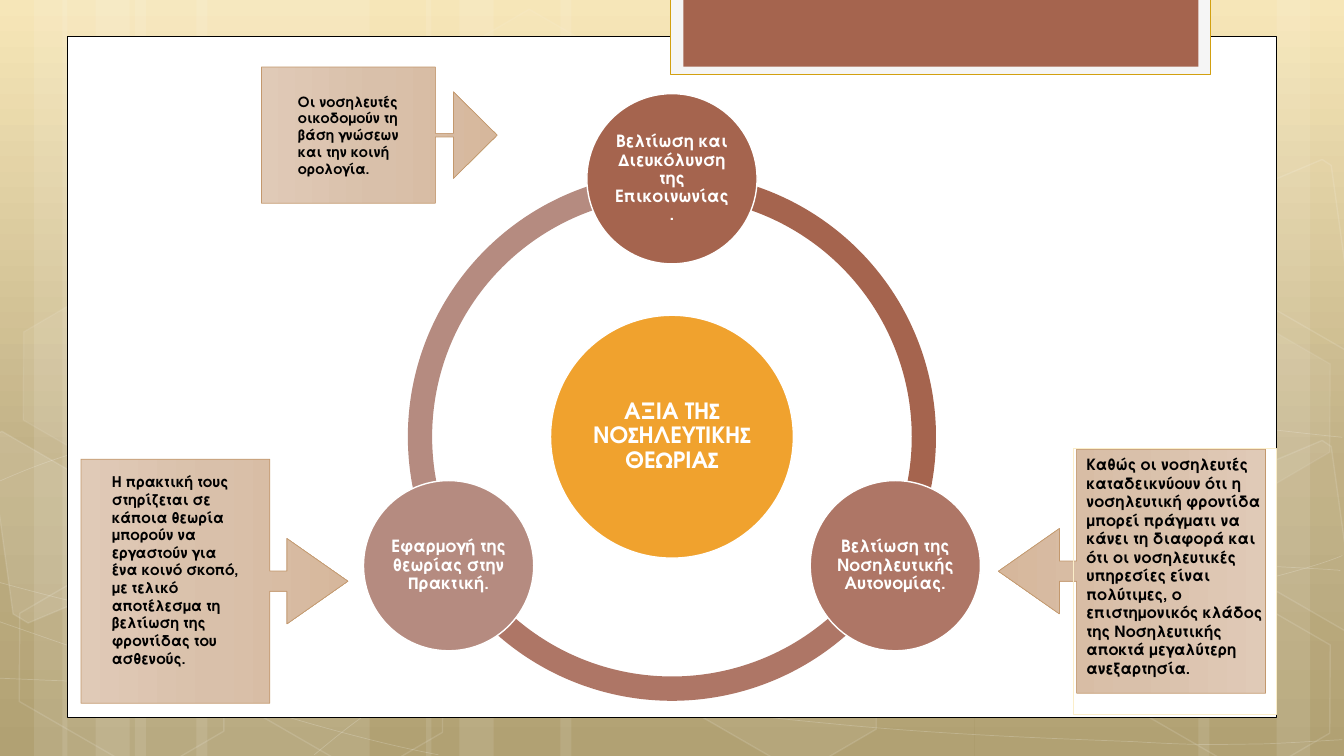
import copy
import math

import lxml.etree
import pptx
import pptx.dml.color
import pptx.enum.shapes
import pptx.enum.text
import pptx.oxml.ns
import pptx.util

Cm = pptx.util.Cm
SHAPES = pptx.enum.shapes.MSO_SHAPE
ALIGN = pptx.enum.text.PP_ALIGN
FONT = "TeX Gyre Adventor"

BANDS = [(3.4, 5.92), (0, 1.7), (0.86, 2.82), (4.95, 5.92), (1.57, 1.7), (2.41, 2.82),
         (24.56, 5.92), (32.17, 1.7), (30.2, 2.82), (14.12, 10.44), (10.74, 1.7), (11.58, 2.82)]

CURVES = [
    [(0, 17.09), (1.8, 17.17), (3.63, 17.25), (6.17, 17.22), (8.71, 17.2), (11.84, 17.15),
     (15.21, 16.89), (18.62, 16.64), (23.42, 16.15), (26.54, 15.67), (29.64, 15.19),
     (32.82, 14.43), (33.83, 14)],
    [(0, 12.12), (0.94, 11.71), (1.9, 11.33), (3.84, 10.95), (5.77, 10.57), (8.48, 10.01),
     (11.48, 9.83), (14.5, 9.65), (18.14, 9.63), (21.87, 9.83), (25.6, 10.03),
     (31.8, 10.82), (33.83, 11.02)],
    [(0, 15.67), (4.01, 17.07), (8.1, 18.47), (11.05, 19.02)],
    [(0, 14.68), (1.02, 14.96), (2.08, 15.24), (4.06, 15.65), (6.02, 16.03), (8.97, 16.66),
     (11.79, 17.09), (14.63, 17.53), (18.19, 17.98), (20.98, 18.24), (23.8, 18.52),
     (26.8, 18.62), (28.6, 18.69), (30.38, 18.8), (30.84, 18.75), (31.72, 18.75),
     (32.59, 18.72), (33.22, 18.67), (33.83, 18.64)],
    [(7.92, 19.02), (8.53, 18.52), (9.12, 18.01), (9.96, 17.55), (10.77, 17.09),
     (11.91, 16.59), (12.85, 16.23), (13.79, 15.88), (14.38, 15.72), (15.62, 15.47),
     (16.87, 15.21), (19.15, 14.86), (20.32, 14.68), (21.51, 14.5), (21.69, 14.5),
     (22.76, 14.45), (23.8, 14.38), (25.45, 14.3), (26.62, 14.27), (27.79, 14.25),
     (29.74, 14.27), (29.74, 14.27), (30.5, 14.27), (31.2, 14.27), (31.98, 14.27),
     (32.61, 14.3), (33.12, 14.33), (33.48, 14.35), (33.78, 14.38), (33.68, 14.35),
     (33.78, 14.38)],
]

HEXAGONS = [(11.02, 0.91, 4, 8), (16.54, 14.96, 6, 12), (0.1, 15.01, 0, 12), (0.2, 7.92, 7, 8),
            (5.61, 15.04, 0, 12), (27.97, 15.06, 0, 12), (27.97, 7.98, 7, 8)]
LEFT_CUT = [(-0.28, 11.02), (0.05, 10.87), (2.64, 12.37), (2.95, 14.76), (0.71, 15.7), (0.33, 15.47)]
RIGHT_CUT = [(31.09, 12.04), (33.32, 11.1), (33.55, 11.25), (34.19, 15.88), (33.99, 15.95), (31.39, 14.45)]
UPPER_RIGHT_CUT = [(x, y - 7.08) for x, y in RIGHT_CUT]


def color(value):
    return pptx.dml.color.RGBColor.from_string(value)


def set_opacity(shape, route, percent):
    for element in shape._element.spPr.xpath(route + "/a:srgbClr"):
        alpha = lxml.etree.SubElement(element, pptx.oxml.ns.qn("a:alpha"))
        alpha.set("val", str(percent * 1000))


def paint(shape, fill=None, line=None, width=1, fill_opacity=100, line_opacity=100):
    shape.shadow.inherit = False
    if fill and fill_opacity:
        shape.fill.solid()
        shape.fill.fore_color.rgb = color(fill)
        if fill_opacity < 100:
            set_opacity(shape, "./a:solidFill", fill_opacity)
    else:
        shape.fill.background()
    if line:
        shape.line.color.rgb = color(line)
        shape.line.width = pptx.util.Pt(width)
        if line_opacity < 100:
            set_opacity(shape, "./a:ln/a:solidFill", line_opacity)
    else:
        shape.line.fill.background()


def paint_gradient(fill, element, stops):
    fill.gradient()
    fill.gradient_angle = 270
    stop_list = element.xpath(".//a:gsLst")[0]
    while len(stop_list) < len(stops):
        stop_list.append(copy.deepcopy(stop_list[0]))
    for stop, (position, value) in zip(fill.gradient_stops, stops):
        stop.position = position
        stop.color.rgb = color(value)


def add_preset(slide, kind, left, top, width, height, adjustments=()):
    shape = slide.shapes.add_shape(kind, Cm(left), Cm(top), Cm(width), Cm(height))
    for index, value in enumerate(adjustments):
        shape.adjustments[index] = value
    return shape


def add_outline(slide, left, top, points, closed):
    corners = [(Cm(left + x), Cm(top + y)) for x, y in points]
    builder = slide.shapes.build_freeform(*corners[0])
    builder.add_line_segments(corners[1:], close=closed)
    return builder.convert_to_shape()


def add_curve(slide, left, top, controls):
    curve = add_outline(slide, left, top, controls, False)
    segments = curve._element.xpath(".//a:lnTo")
    for start in range(0, len(segments), 3):
        bend = lxml.etree.Element(pptx.oxml.ns.qn("a:cubicBezTo"))
        segments[start].addprevious(bend)
        for segment in segments[start:start + 3]:
            bend.append(segment[0])
            segment.getparent().remove(segment)
    return curve


def write(shape, text, size, value, alignment, inset=0.25, bottom=None, spacing=None, shift=0):
    frame = shape.text_frame
    frame.word_wrap = True
    frame.vertical_anchor = pptx.enum.text.MSO_ANCHOR.MIDDLE
    frame.margin_left, frame.margin_right = Cm(inset + shift), Cm(inset - shift)
    frame.margin_top = Cm(min(inset, 0.13))
    frame.margin_bottom = Cm(bottom or min(inset, 0.13))
    paragraph = frame.paragraphs[0]
    paragraph.text = text
    paragraph.alignment = alignment
    paragraph.line_spacing = spacing
    paragraph.font.name = FONT
    paragraph.font.size = pptx.util.Pt(size)
    paragraph.font.bold = True
    paragraph.font.color.rgb = color(value)


def draw_backdrop(slide, left, top, height):
    paint_gradient(slide.background.fill, slide._element,
                   [(0, "F6E4B0"), (0.62, "BAA878"), (1, "A99764")])
    for offset, width in BANDS:
        paint(add_preset(slide, SHAPES.RECTANGLE, left + offset, top, width, height),
              "FFFFFF", fill_opacity=10)
    for controls in CURVES:
        paint(add_curve(slide, left, top, controls), line="FFFFFF", width=0.5, line_opacity=20)
    for x, y, fill_opacity, line_opacity in HEXAGONS:
        hexagon = add_preset(slide, SHAPES.HEXAGON, left + x, top + y, 5.94, 3.86, (0.285, 1.155))
        hexagon.rotation = 30
        paint(hexagon, "FFFFFF", "FFFFFF", 1, fill_opacity, line_opacity)
    for points, fill_opacity in ((LEFT_CUT, 10), (RIGHT_CUT, 4), (UPPER_RIGHT_CUT, 0)):
        paint(add_outline(slide, left, top, points, True), "FFFFFF", "FFFFFF", 1, fill_opacity, 12)


def draw_panel(slide, left, top, width, height):
    paint(add_preset(slide, SHAPES.RECTANGLE, left, top, width, height), "FFFFFF", "000000", 0.5)
    tab_left, tab_top = left + 15.21, top - 0.96
    paint(add_preset(slide, SHAPES.RECTANGLE, tab_left, tab_top, 13.61, 1.93), "F5F5F5", "D2A010")
    paint(add_preset(slide, SHAPES.RECTANGLE, tab_left + 0.32, tab_top, 12.98, 1.73), "A5644E")


def draw_disc(slide, center_x, center_y, diameter, fill, text, size):
    disc = add_preset(slide, SHAPES.OVAL, center_x - diameter / 2, center_y - diameter / 2,
                      diameter, diameter)
    paint(disc, fill, "FFFFFF")
    write(disc, text, size, "FFFFFF", ALIGN.CENTER, inset=0.04, spacing=0.9)


def draw_cycle(slide, left, top, diameter, hub, nodes):
    center_x, center_y = left + diameter / 2, top + diameter / 2
    turn = 360 / len(nodes)
    angles = [(270 + turn * index) % 360 for index in range(len(nodes))]
    for angle, (fill, _) in reversed(list(zip(angles, nodes))):
        arc = add_preset(slide, SHAPES.BLOCK_ARC, left, top, diameter, diameter,
                         (angle * 0.6, (angle + turn) % 360 * 0.6, 0.046))
        paint(arc, fill)
    draw_disc(slide, center_x, center_y, 6.12, "F0A22E", hub, 16)
    for angle, (fill, text) in zip(angles, nodes):
        radians = math.radians(angle)
        draw_disc(slide, center_x + 6.5 * math.cos(radians), center_y + 6.5 * math.sin(radians),
                  4.29, fill, text, 12)


def draw_callout(slide, box, rotation, adjustments, text_box, text, size, shift, bottom=None, border=None):
    left, top, width, height = box
    callout = add_preset(slide, SHAPES.DOWN_ARROW_CALLOUT, left + (width - height) / 2,
                         top + (height - width) / 2, height, width, adjustments)
    callout.rotation = rotation
    paint(callout, line="C3986D", width=0.5)
    paint_gradient(callout.fill, callout._element, [(0, "E0CAB7"), (0.5, "D9C0AA"), (1, "D6B79C")])
    x, y, text_width, text_height = text_box
    label = slide.shapes.add_textbox(Cm(left + x), Cm(top + y), Cm(text_width), Cm(text_height))
    if border:
        label.line.color.rgb = color(border)
        label.line.width = pptx.util.Pt(0.75)
    write(label, text, size, "000000", ALIGN.LEFT, bottom=bottom, shift=shift)


def main():
    presentation = pptx.Presentation()
    presentation.slide_width, presentation.slide_height = Cm(33.87), Cm(19.05)
    slide = presentation.slides.add_slide(presentation.slide_layouts[6])
    draw_backdrop(slide, 0, 0, 19.05)
    draw_panel(slide, 1.69, 0.91, 30.48, 17.18)
    draw_cycle(slide, 10.28, 4.35, 13.31, "ΑΞΙΑ ΤΗΣ ΝΟΣΗΛΕΥΤΙΚΗΣ ΘΕΩΡΙΑΣ", [
        ("A5644E", "Βελτίωση και Διευκόλυνση της Επικοινωνίας."),
        ("AE7666", "Βελτίωση της Νοσηλευτικής Αυτονομίας."),
        ("B58B80", "Εφαρμογή της θεωρίας στην Πρακτική."),
    ])
    wide_arrow = (0.083, 0.175, 0.25, 0.707)
    draw_callout(slide, (25.16, 11.32, 6.73, 6.15), 90, wide_arrow, (1.89, -0.02, 5.11, 6.7),
                 "Καθώς οι νοσηλευτές καταδεικνύουν ότι η νοσηλευτική φροντίδα μπορεί πράγματι να "
                 "κάνει τη διαφορά και ότι οι νοσηλευτικές υπηρεσίες είναι πολύτιμες, ο επιστημονικός "
                 "κλάδος της Νοσηλευτικής αποκτά μεγαλύτερη ανεξαρτησία.", 11, 0.08, 0.89, "FBEEC9")
    draw_callout(slide, (6.59, 1.69, 5.94, 3.43), 270, (0.026, 0.318, 0.321, 0.738),
                 (0.47, 0.52, 3.43, 2.39),
                 "Οι νοσηλευτές οικοδομούν τη βάση γνώσεων και την κοινή ορολογία.", 10, 0.2)
    draw_callout(slide, (2.04, 11.57, 6.73, 6.15), 270, wide_arrow, (0.45, 0.19, 3.81, 5.97),
                 "Η πρακτική τους στηρίζεται σε κάποια θεωρία μπορούν να εργαστούν για ένα κοινό "
                 "σκοπό, με τελικό αποτέλεσμα τη βελτίωση της φροντίδας του ασθενούς.", 10.5, 0.08, 0.89)
    presentation.save("out.pptx")


if __name__ == "__main__":
    main()
